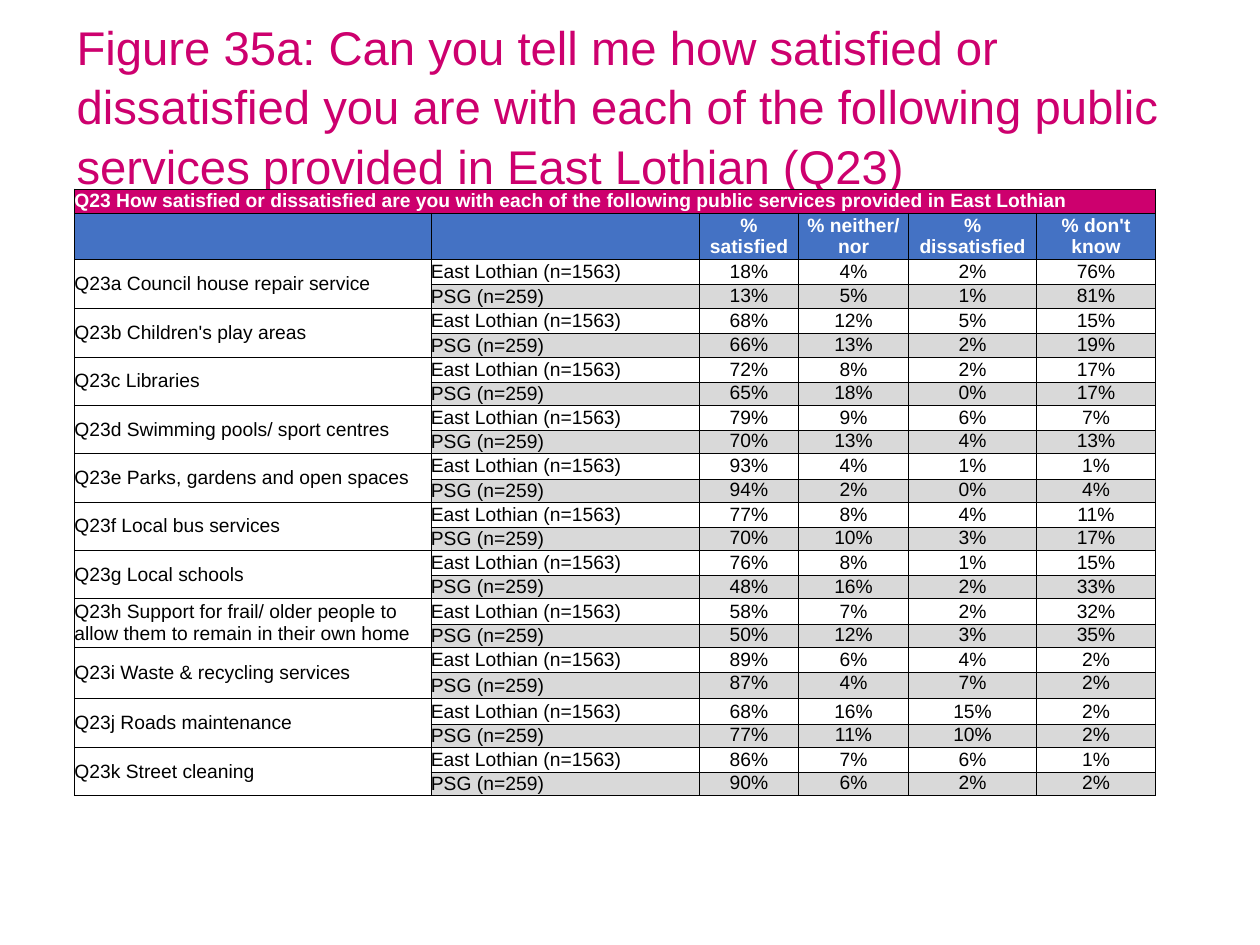
from dataclasses import dataclass

from lxml import etree
from pptx import Presentation
from pptx.dml.color import RGBColor
from pptx.enum.text import MSO_ANCHOR, PP_ALIGN
from pptx.oxml.ns import qn
from pptx.util import Inches, Pt

LEFT, CENTER = PP_ALIGN.LEFT, PP_ALIGN.CENTER
TOP, MIDDLE = MSO_ANCHOR.TOP, MSO_ANCHOR.MIDDLE

COLORS = {
    "pink": "CD006E",
    "blue": "4472C4",
    "grey": "D9D9D9",
    "white": "FFFFFF",
    "black": "000000",
}
FONT = "Arial"
TITLE_SIZE, TABLE_SIZE = 27, 11
BORDER_WIDTH = 0.5

SLIDE_WIDTH, SLIDE_HEIGHT = 10, 7.5
TITLE_AREA = (0.51, 0.21, 9, 1.24)
TABLE_LEFT, TABLE_TOP = 0.59, 1.5
COLUMN_WIDTHS = (2.83, 2.13, 0.79, 0.87, 1.02, 0.94)
BANNER_HEIGHT, HEADING_HEIGHT = 0.19, 0.37
COUNTY_HEIGHT, GROUP_HEIGHT = 0.2, 0.17

TITLE = ("Figure 35a: Can you tell me how satisfied or dissatisfied you are with "
         "each of the following public services provided in East Lothian (Q23)")
BANNER = ("Q23 How satisfied or dissatisfied are you with each of the following "
          "public services provided in East Lothian")
HEADINGS = ("", "", "% satisfied", "% neither/ nor", "% dissatisfied", "% don't know")
COUNTY_LABEL, GROUP_LABEL = "East Lothian (n=1563)", "PSG (n=259)"


@dataclass(frozen=True)
class Service:
    name: str
    county: tuple[int, ...]
    group: tuple[int, ...]
    group_height: float = GROUP_HEIGHT


SERVICES = (
    Service("Q23a Council house repair service", (18, 4, 2, 76), (13, 5, 1, 81), 0.19),
    Service("Q23b Children's play areas", (68, 12, 5, 15), (66, 13, 2, 19)),
    Service("Q23c Libraries", (72, 8, 2, 17), (65, 18, 0, 17)),
    Service("Q23d Swimming pools/ sport centres", (79, 9, 6, 7), (70, 13, 4, 13)),
    Service("Q23e Parks, gardens and open spaces", (93, 4, 1, 1), (94, 2, 0, 4)),
    Service("Q23f Local bus services", (77, 8, 4, 11), (70, 10, 3, 17)),
    Service("Q23g Local schools", (76, 8, 1, 15), (48, 16, 2, 33)),
    Service("Q23h Support for frail/ older people to allow them to remain in their own home",
            (58, 7, 2, 32), (50, 12, 3, 35)),
    Service("Q23i Waste & recycling services", (89, 6, 4, 2), (87, 4, 7, 2), 0.21),
    Service("Q23j Roads maintenance", (68, 16, 15, 2), (77, 11, 10, 2)),
    Service("Q23k Street cleaning", (86, 7, 6, 1), (90, 6, 2, 2)),
)


def write_text(frame, text: str, *, size: float, color: str,
               bold: bool = False, align=LEFT) -> None:
    para = frame.paragraphs[0]
    para.alignment = align
    span = para.add_run()
    span.text = text
    span.font.name = FONT
    span.font.size = Pt(size)
    span.font.bold = bold
    span.font.color.rgb = RGBColor.from_string(COLORS[color])


def draw_borders(cell) -> None:
    properties = cell._tc.get_or_add_tcPr()
    for position, side in enumerate(("a:lnL", "a:lnR", "a:lnT", "a:lnB")):
        line = etree.Element(qn(side), w=str(Pt(BORDER_WIDTH)))
        fill = etree.SubElement(line, qn("a:solidFill"))
        etree.SubElement(fill, qn("a:srgbClr"), val=COLORS["black"])
        properties.insert(position, line)


def fill_cell(cell, text: str, *, fill: str, color: str = "black", bold: bool = False,
              align=LEFT, anchor=MIDDLE) -> None:
    cell.margin_left = cell.margin_right = cell.margin_top = cell.margin_bottom = 0
    cell.vertical_anchor = anchor
    cell.fill.solid()
    cell.fill.fore_color.rgb = RGBColor.from_string(COLORS[fill])
    if text:
        write_text(cell.text_frame, text, size=TABLE_SIZE, color=color, bold=bold, align=align)


def fill_answers(table, row: int, label: str, shares: tuple[int, ...],
                 fill: str, anchor) -> None:
    fill_cell(table.cell(row, 1), label, fill=fill)
    for column, share in enumerate(shares, start=2):
        fill_cell(table.cell(row, column), f"{share}%", fill=fill, align=CENTER, anchor=anchor)


def add_title(page) -> None:
    box = page.shapes.add_textbox(*map(Inches, TITLE_AREA))
    frame = box.text_frame
    frame.word_wrap = True
    frame.vertical_anchor = MIDDLE
    write_text(frame, TITLE, size=TITLE_SIZE, color="pink")
    frame.paragraphs[0].line_spacing = 1.05


def add_satisfaction_table(page) -> None:
    heights = [BANNER_HEIGHT, HEADING_HEIGHT]
    for service in SERVICES:
        heights += [COUNTY_HEIGHT, service.group_height]
    table = page.shapes.add_table(
        len(heights), len(COLUMN_WIDTHS), Inches(TABLE_LEFT), Inches(TABLE_TOP),
        Inches(sum(COLUMN_WIDTHS)), Inches(sum(heights))).table
    for column, width in zip(table.columns, COLUMN_WIDTHS):
        column.width = Inches(width)
    for row, height in zip(table.rows, heights):
        row.height = Inches(height)

    table.cell(0, 0).merge(table.cell(0, len(COLUMN_WIDTHS) - 1))
    fill_cell(table.cell(0, 0), BANNER, fill="pink", color="white", bold=True)
    for column, heading in enumerate(HEADINGS):
        fill_cell(table.cell(1, column), heading, fill="blue", color="white",
                  bold=True, align=CENTER)
    for index, service in enumerate(SERVICES):
        row = 2 + 2 * index
        table.cell(row, 0).merge(table.cell(row + 1, 0))
        fill_cell(table.cell(row, 0), service.name, fill="white")
        fill_answers(table, row, COUNTY_LABEL, service.county, "white", MIDDLE)
        fill_answers(table, row + 1, GROUP_LABEL, service.group, "grey", TOP)
    for cell in table.iter_cells():
        draw_borders(cell)


def main() -> None:
    deck = Presentation()
    deck.slide_width, deck.slide_height = Inches(SLIDE_WIDTH), Inches(SLIDE_HEIGHT)
    page = deck.slides.add_slide(deck.slide_layouts[6])
    add_title(page)
    add_satisfaction_table(page)
    deck.save("out.pptx")


if __name__ == "__main__":
    main()
